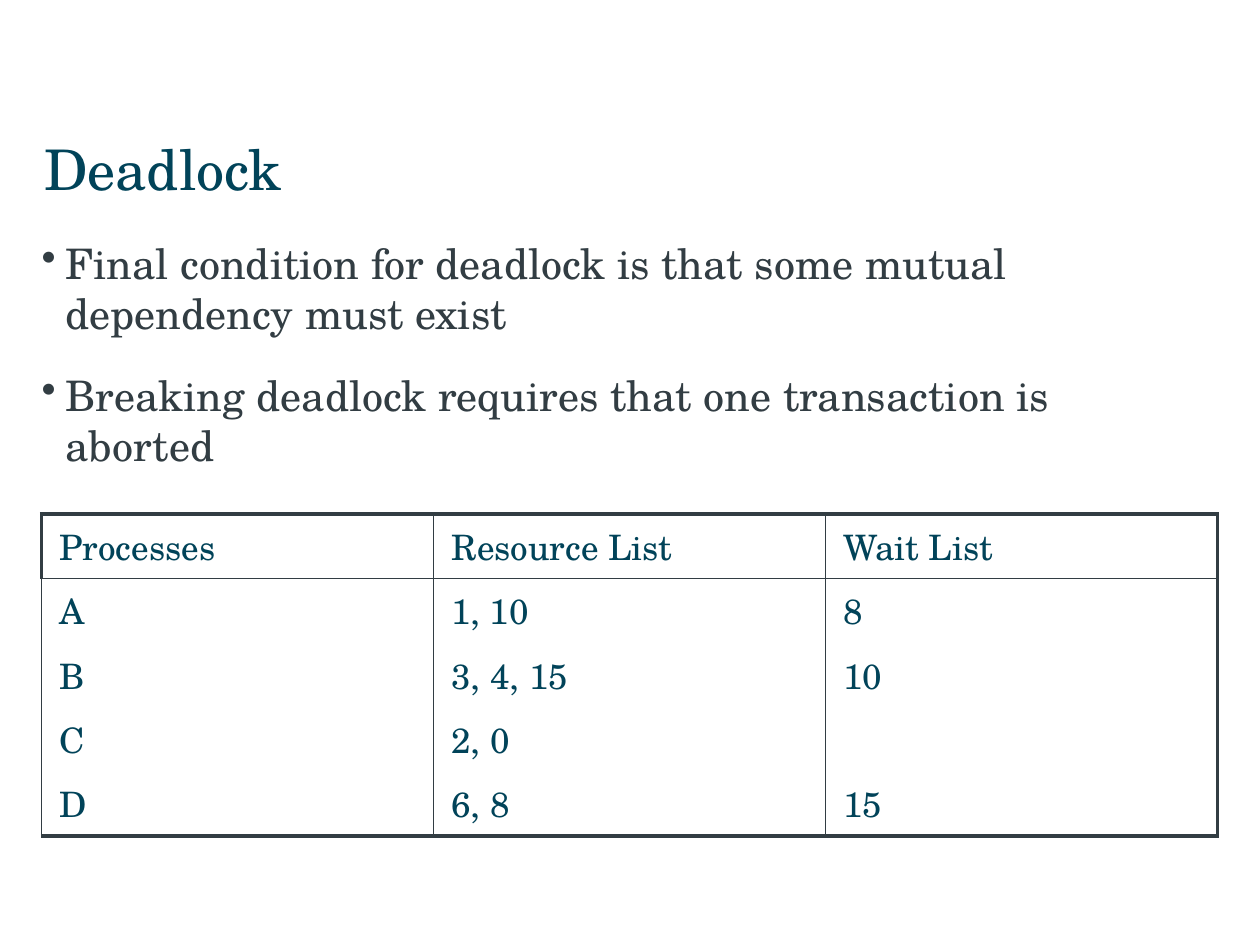
"""Build the Deadlock slide: title, two bullets and a process table."""
import pptx
import pptx.dml.color
import pptx.enum.text
import pptx.oxml
import pptx.oxml.ns
import pptx.util
from lxml import etree

Cm, Pt = pptx.util.Cm, pptx.util.Pt
ANCHOR = pptx.enum.text.MSO_ANCHOR
FONT = "TeX Gyre Schola"
COLORS = {"teal": "014359", "slate": "323D43"}
BULLETS = [
    "Final condition for deadlock is that some mutual dependency must exist",
    "Breaking deadlock requires that one transaction is aborted",
]
PROCESSES = [
    ["Processes", "Resource List", "Wait List"],
    ["A", "1, 10", "8"],
    ["B", "3, 4, 15", "10"],
    ["C", "2, 0", ""],
    ["D", "6, 8", "15"],
]
THIN, THICK = 1, 2.25


def write(paragraph, text, size, color):
    paragraph.alignment = pptx.enum.text.PP_ALIGN.LEFT
    run = paragraph.add_run()
    run.text = text
    run.font.name = FONT
    run.font.size = Pt(size)
    run.font.color.rgb = pptx.dml.color.RGBColor.from_string(COLORS[color])


def set_borders(cell, widths):
    properties = cell._tc.get_or_add_tcPr()
    for position, (side, width) in enumerate(widths.items()):
        fill = f'<a:solidFill><a:srgbClr val="{COLORS["slate"]}"/></a:solidFill>' if width else "<a:noFill/>"
        properties.insert(position, pptx.oxml.parse_xml(
            f'<a:ln{side} {pptx.oxml.ns.nsdecls("a")} w="{Pt(width)}">{fill}</a:ln{side}>'))


deck = pptx.Presentation()
deck.slide_width, deck.slide_height = Cm(25.4), Cm(19.05)
slide = deck.slides.add_slide(deck.slide_layouts[5])

title = slide.shapes.title
title.left, title.top, title.width, title.height = Cm(0.89), Cm(2.49), Cm(23.6), Cm(1.8)
bullets = slide.shapes.add_textbox(Cm(0.84), Cm(4.65), Cm(23.7), Cm(5.28))
for frame, anchor in ((title.text_frame, ANCHOR.MIDDLE), (bullets.text_frame, ANCHOR.TOP)):
    frame.word_wrap = True
    frame.auto_size = pptx.enum.text.MSO_AUTO_SIZE.NONE
    frame.vertical_anchor = anchor
    frame.margin_left, frame.margin_right = 0, Cm(0.25)
    frame.margin_top = frame.margin_bottom = Cm(0.13)
write(title.text_frame.paragraphs[0], "Deadlock", 32, "teal")

for number, text in enumerate(BULLETS):
    frame = bullets.text_frame
    paragraph = frame.add_paragraph() if number else frame.paragraphs[0]
    layout = paragraph._p.get_or_add_pPr()
    layout.set("marL", str(Cm(0.48)))
    layout.set("indent", str(-Cm(0.48)))
    etree.SubElement(layout, pptx.oxml.ns.qn("a:buChar"), char="•")
    paragraph.space_after = Pt(18)
    write(paragraph, text, 24, "slate")

row_count, column_count = len(PROCESSES), len(PROCESSES[0])
row_height = Cm(1.29)
table = slide.shapes.add_table(
    row_count, column_count, Cm(0.84), Cm(10.36), Cm(23.7), row_height * row_count).table
table.first_row = table.horz_banding = False
for row, values in enumerate(PROCESSES):
    table.rows[row].height = row_height
    for column, value in enumerate(values):
        cell = table.cell(row, column)
        cell.fill.background()
        cell.margin_left = cell.margin_right = Cm(0.36)
        cell.margin_top = cell.margin_bottom = Cm(0.13)
        cell.vertical_anchor = ANCHOR.BOTTOM
        if value:
            write(cell.text_frame.paragraphs[0], value, 20, "teal")
        set_borders(cell, {
            "L": THICK if row == column == 0 else THIN,
            "R": THICK if column == column_count - 1 else THIN,
            "T": {0: THICK, 1: THIN}.get(row, 0),
            "B": {0: THIN, row_count - 1: THICK}.get(row, 0),
        })

deck.save("out.pptx")
